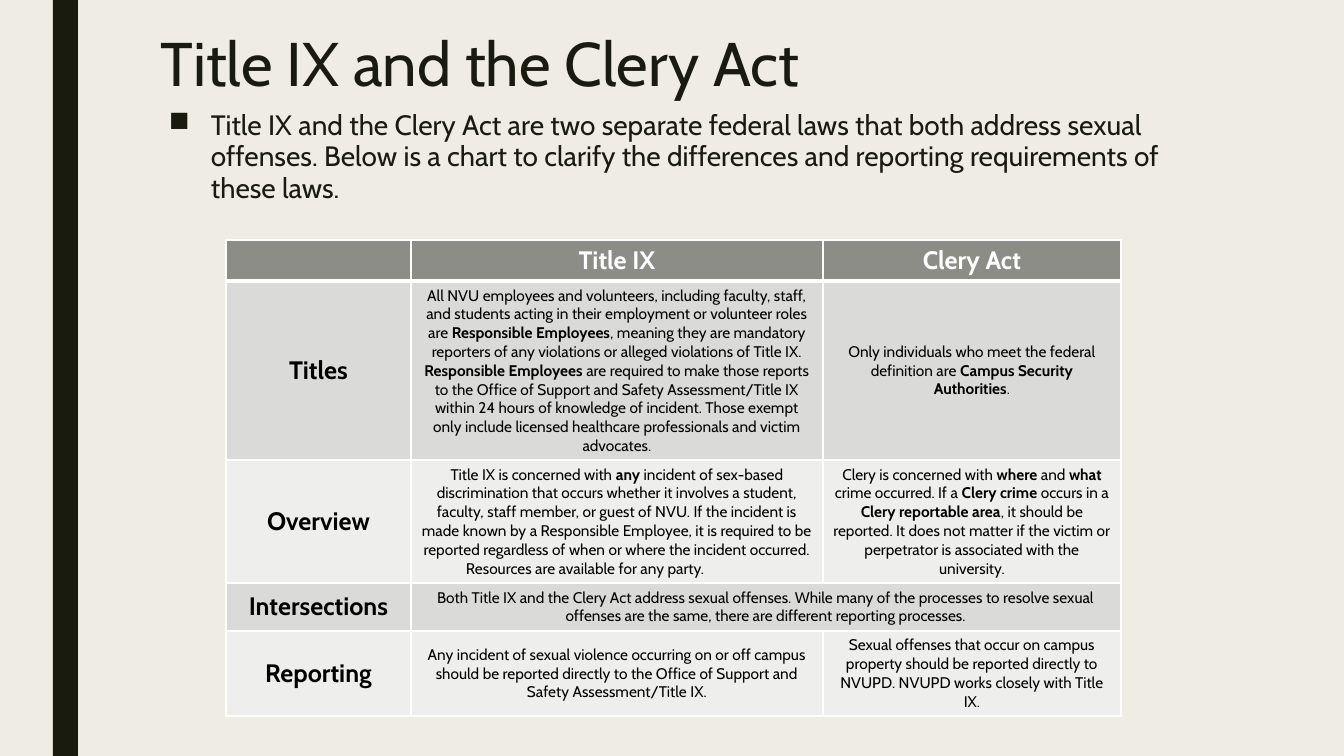
from lxml.etree import SubElement
from pptx import Presentation
from pptx.dml.color import RGBColor
from pptx.enum.shapes import MSO_SHAPE
from pptx.enum.text import MSO_ANCHOR, PP_ALIGN
from pptx.oxml import parse_xml
from pptx.oxml.ns import nsdecls, qn
from pptx.util import Pt

PX = 12192000 / 1344
INK = "191B0E"


def px(*sizes):
    return [round(size * PX) for size in sizes]


def write(frame, text, size=11, color="000000", bold=False, align=PP_ALIGN.CENTER, lead=None):
    """Fill a frame; parts between ** marks switch the weight to bold."""
    frame.word_wrap = True
    para = frame.paragraphs[0]
    para.alignment = align
    if lead:
        para.line_spacing = lead
    for i, part in enumerate(text.split("**")):
        run = para.add_run()
        run.text = part
        font = run.font
        font.name, font.size = "Cabin", Pt(size)
        font.bold = bold or i % 2 == 1
        font.color.rgb = RGBColor.from_string(color)
    return para


deck = Presentation()
deck.slide_width, deck.slide_height = px(1344, 756)
slide = deck.slides.add_slide(deck.slide_layouts[6])
shapes = slide.shapes

# Background and side bar
back = slide.background.fill
back.solid()
back.fore_color.rgb = RGBColor.from_string("EFEDE3")
bar = shapes.add_shape(MSO_SHAPE.RECTANGLE, *px(53, 0, 25, 756))
bar.shadow.inherit = False
bar.fill.solid()
bar.fill.fore_color.rgb = RGBColor.from_string(INK)
bar.line.fill.background()

# Title
title = shapes.add_textbox(*px(151, 29, 1058, 163))
write(title.text_frame, "Title IX and the Clery Act", size=44, color=INK,
      align=PP_ALIGN.LEFT, lead=0.89)

# Lead paragraph with a square bullet
intro = shapes.add_textbox(*px(159, 105, 1058, 114))
para = write(
    intro.text_frame,
    "Title IX and the Clery Act are two separate federal laws that both address sexual "
    "offenses. Below is a chart to clarify the differences and reporting requirements of "
    "these laws.",
    size=20, color=INK, align=PP_ALIGN.LEFT, lead=0.94)
para.space_before, para.space_after = Pt(10), Pt(2)
props = para._p.get_or_add_pPr()
indent = px(42)[0]
props.set("marL", str(indent))
props.set("indent", str(-indent))
SubElement(props, qn("a:buChar")).set("char", "■")

# Table content
rows = [
    ["", "Title IX", "Clery Act"],
    ["Titles",
     "All NVU employees and volunteers, including faculty, staff, and students acting in "
     "their employment or volunteer roles are **Responsible Employees**, meaning they are "
     "mandatory reporters of any violations or alleged violations of Title IX. "
     "**Responsible Employees** are required to make those reports to the Office of Support "
     "and Safety Assessment/Title IX within 24 hours of knowledge of incident. Those exempt "
     "only include licensed healthcare professionals and victim advocates.",
     "Only individuals who meet the federal definition are **Campus Security Authorities**."],
    ["Overview",
     "Title IX is concerned with **any **incident of sex-based discrimination that occurs "
     "whether it involves a student, faculty, staff member, or guest of NVU. If the incident "
     "is made known by a Responsible Employee, it is required to be reported regardless of "
     "when or where the incident occurred. Resources are available for any party. \t",
     "Clery is concerned with **where** and **what** crime occurred. If a **Clery crime** "
     "occurs in a **Clery reportable area**, it should be reported. It does not matter if "
     "the victim or perpetrator is associated with the university."],
    ["Intersections",
     "Both Title IX and the Clery Act address sexual offenses. While many of the processes "
     "to resolve sexual offenses are the same, there are different reporting processes.",
     ""],
    ["Reporting",
     "Any incident of sexual violence occurring on or off campus should be reported directly "
     "to the Office of Support and Safety Assessment/Title IX.",
     "Sexual offenses that occur on campus property should be reported directly to NVUPD. "
     "NVUPD works closely with Title IX."],
]
widths = px(185, 412, 298)
heights = px(41, 179, 123, 48, 85)

# Table grid
table = shapes.add_table(5, 3, *px(226, 240, 895, 476)).table
for col, width in zip(table.columns, widths):
    col.width = width
for row, height in zip(table.rows, heights):
    row.height = height
table.cell(3, 1).merge(table.cell(3, 2))

# Cells: text, fill and white borders, thicker under the header
for r, row in enumerate(rows):
    fill = "8C8D86" if r == 0 else ("EEEEED", "DADBD9")[r % 2]
    for c, text in enumerate(row):
        cell = table.cell(r, c)
        cell.fill.solid()
        cell.fill.fore_color.rgb = RGBColor.from_string(fill)
        cell.vertical_anchor = MSO_ANCHOR.MIDDLE if r else MSO_ANCHOR.TOP
        head = r == 0 or c == 0
        if text:
            para = write(cell.text_frame, text, size=18 if head else 11, bold=head,
                         color="000000" if r else "FFFFFF")
            if "\t" in text:
                stops = SubElement(para._p.get_or_add_pPr(), qn("a:tabLst"))
                stop = SubElement(stops, qn("a:tab"))
                stop.set("pos", str(px(302)[0]))
                stop.set("algn", "l")
        for i, side in enumerate("LRTB"):
            thick = (r, side) in [(0, "B"), (1, "T")]
            edge = parse_xml(
                f'<a:ln{side} {nsdecls("a")} w="{Pt(3 if thick else 1)}"><a:solidFill>'
                f'<a:srgbClr val="FFFFFF"/></a:solidFill></a:ln{side}>')
            cell._tc.get_or_add_tcPr().insert(i, edge)

deck.save("out.pptx")
